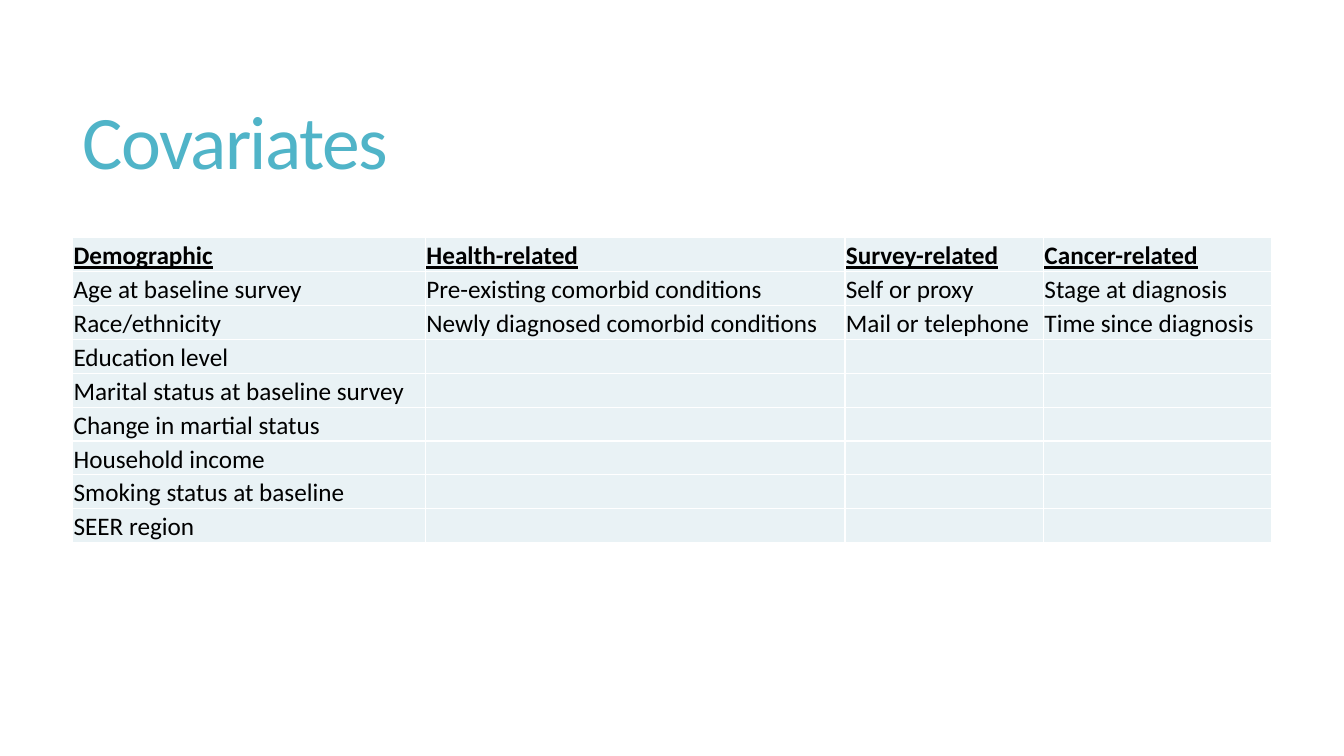
import pptx
import pptx.util
import pptx.dml.color
import pptx.enum.text
import lxml.etree
from pptx.util import Inches

TITLE_BLUE = pptx.dml.color.RGBColor(0x50, 0xB4, 0xC8)
CELL_FILL = pptx.dml.color.RGBColor(0xE9, 0xF2, 0xF5)
BORDER_WHITE = pptx.dml.color.RGBColor(0xFF, 0xFF, 0xFF)
TEXT_BLACK = pptx.dml.color.RGBColor(0x00, 0x00, 0x00)
FONT_NAME = "Calibri"
ROW_HEIGHT = 0.336
COVARIATES = [
    (3.5, "Demographic", [
        "Age at baseline survey", "Race/ethnicity", "Education level",
        "Marital status at baseline survey", "Change in martial status",
        "Household income", "Smoking status at baseline", "SEER region"]),
    (4.16, "Health-related", [
        "Pre-existing comorbid conditions", "Newly diagnosed comorbid conditions"]),
    (1.97, "Survey-related", ["Self or proxy", "Mail or telephone"]),
    (2.26, "Cancer-related", ["Stage at diagnosis", "Time since diagnosis"]),
]


def add_run(paragraph, text, size, color):
    run = paragraph.add_run()
    run.text = text
    run.font.name = FONT_NAME
    run.font.size = pptx.util.Pt(size)
    run.font.color.rgb = color
    return run


def add_borders(cell):
    properties = cell._tc.get_or_add_tcPr()
    for position, side in enumerate(("lnL", "lnR", "lnT", "lnB")):
        line = lxml.etree.Element(pptx.oxml.ns.qn("a:" + side), w=str(pptx.util.Pt(1)))
        fill = lxml.etree.SubElement(line, pptx.oxml.ns.qn("a:solidFill"))
        lxml.etree.SubElement(fill, pptx.oxml.ns.qn("a:srgbClr"), val=str(BORDER_WHITE))
        properties.insert(position, line)


presentation = pptx.Presentation()
presentation.slide_width = Inches(13.33)
presentation.slide_height = Inches(7.5)
slide = presentation.slides.add_slide(presentation.slide_layouts[5])

title = slide.shapes.title
title.left, title.top = Inches(0.72), Inches(0.55)
title.width, title.height = Inches(11.78), Inches(1.81)
title.text_frame.vertical_anchor = pptx.enum.text.MSO_ANCHOR.MIDDLE
title.text_frame.auto_size = pptx.enum.text.MSO_AUTO_SIZE.NONE
title_paragraph = title.text_frame.paragraphs[0]
title_paragraph.alignment = pptx.enum.text.PP_ALIGN.LEFT
title_paragraph.line_spacing = 0.85
title_run = add_run(title_paragraph, "Covariates", 54, TITLE_BLUE)
title_run.font._element.set("spc", "-120")

row_count = 1 + max(len(items) for width, heading, items in COVARIATES)
table = slide.shapes.add_table(
    row_count, len(COVARIATES), Inches(0.72), Inches(2.36),
    Inches(11.89), Inches(ROW_HEIGHT * row_count)).table
table.first_row = False
table.horz_banding = False
for row in table.rows:
    row.height = Inches(ROW_HEIGHT)

for column_index, (width, heading, items) in enumerate(COVARIATES):
    table.columns[column_index].width = Inches(width)
    texts = [heading] + items
    for row_index in range(row_count):
        cell = table.cell(row_index, column_index)
        cell.margin_left = cell.margin_right = cell.margin_top = Inches(0.01)
        cell.margin_bottom = 0
        cell.vertical_anchor = pptx.enum.text.MSO_ANCHOR.BOTTOM
        cell.fill.solid()
        cell.fill.fore_color.rgb = CELL_FILL
        add_borders(cell)
        if row_index < len(texts):
            run = add_run(cell.text_frame.paragraphs[0], texts[row_index], 18, TEXT_BLACK)
            run.font.bold = run.font.underline = row_index == 0

presentation.save("out.pptx")
